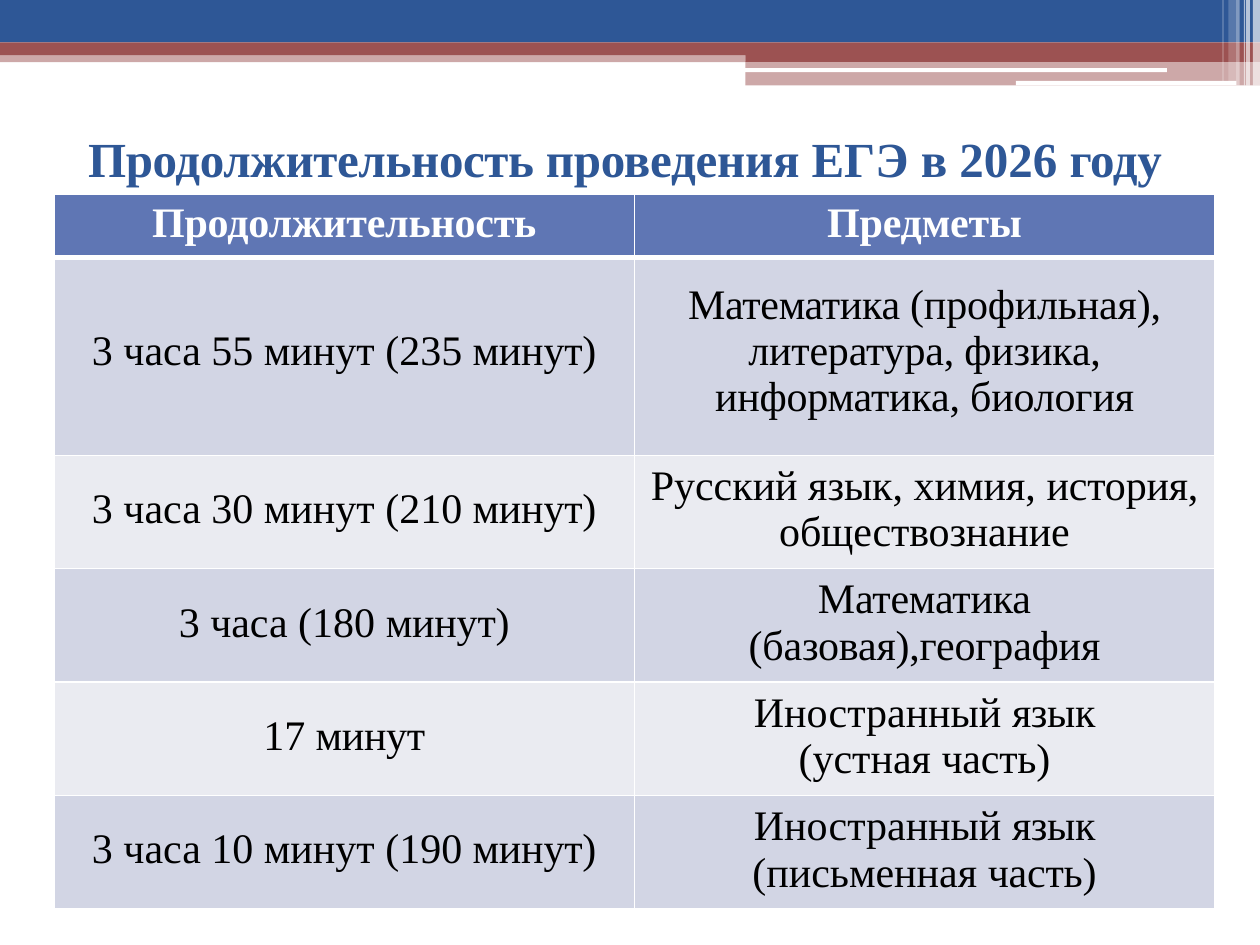
from pptx import Presentation, util as u
from pptx.dml.color import RGBColor
from pptx.enum import shapes, text
from pptx.oxml.xmlchemy import OxmlElement

Pt = u.Pt
BLUE, RED, WHITE = "2E5796", "9C5252", "FFFFFF"
HEADER, DARK, LIGHT = "5F76B4", "D2D5E4", "EAEBF1"


def rgb(value):
    return RGBColor.from_string(value)


class Deck:
    font = "Times New Roman"

    def __init__(self, slide):
        self.s = slide

    def paint(self, sp, color, alpha=100):
        sp.shadow.inherit = False
        sp.line.fill.background()
        sp.fill.solid()
        sp.fill.fore_color.rgb = rgb(color)
        if alpha < 100:
            a = OxmlElement("a:alpha")
            a.set("val", str(alpha * 1000))
            sp.fill._xPr.solidFill[0].append(a)

    def bar(self, x, y, w, h, color, alpha=100):
        sp = self.s.shapes.add_shape(shapes.MSO_SHAPE.RECTANGLE, Pt(x), Pt(y), Pt(w), Pt(h))
        self.paint(sp, color, alpha)

    def outline(self, points, color):
        start, *rest = [(Pt(x), Pt(y)) for x, y in points]
        builder = self.s.shapes.build_freeform(*start)
        builder.add_line_segments(rest)
        self.paint(builder.convert_to_shape(), color)

    def runs(self, p, parts, size, color, bold=False):
        """Each part is a text with its letter spacing in 1/100 pt."""
        for words, spacing in parts:
            r = p.add_run()
            r.text = words
            r.font.name, r.font.size, r.font.bold = self.font, Pt(size), bold
            r.font.color.rgb = rgb(color)
            r._r.get_or_add_rPr().set("spc", str(spacing))

    def title(self, x, y, w, h, parts):
        tf = self.s.shapes.add_textbox(Pt(x), Pt(y), Pt(w), Pt(h)).text_frame
        tf.word_wrap = True
        tf.margin_left = tf.margin_right = tf.margin_bottom = 0
        tf.margin_top = Pt(0.9)
        p = tf.paragraphs[0]
        p.alignment = text.PP_ALIGN.LEFT
        p.line_spacing = 1.0
        self.runs(p, parts, 28, BLUE, True)

    def borders(self, cell, top, bottom):
        for side, width in (("L", 1), ("R", 1), ("T", top), ("B", bottom)):
            ln = OxmlElement(f"a:ln{side}")
            ln.set("w", str(Pt(width)))
            fill, clr = OxmlElement("a:solidFill"), OxmlElement("a:srgbClr")
            clr.set("val", WHITE)
            fill.append(clr)
            ln.append(fill)
            cell._tc.get_or_add_tcPr().append(ln)

    def cell(self, cell, paragraphs, row, side):
        self.borders(cell, 3 if row == 1 else 1, 3 if row == 0 else 1)
        cell.fill.solid()
        cell.fill.fore_color.rgb = rgb(HEADER if row == 0 else DARK if row % 2 else LIGHT)
        cell.vertical_anchor = text.MSO_ANCHOR.MIDDLE
        cell.margin_left = cell.margin_right = Pt(side)
        cell.margin_top, cell.margin_bottom = 0, Pt(6 if row == 1 else 3)
        tf = cell.text_frame
        for i, parts in enumerate(paragraphs):
            p = tf.paragraphs[0] if i == 0 else tf.add_paragraph()
            p.alignment = text.PP_ALIGN.CENTER
            self.runs(p, parts, 24, WHITE if row == 0 else "000000", row == 0)

    def table(self, x, y, widths, heights, rows):
        """Each row holds the left cell, the right cell and the right cell's side margin."""
        table = self.s.shapes.add_table(len(rows), len(widths), Pt(x), Pt(y),
                                        Pt(sum(widths)), Pt(sum(heights))).table
        for col, width in zip(table.columns, widths):
            col.width = Pt(width)
        for i, (left, right, side) in enumerate(rows):
            table.rows[i].height = Pt(heights[i])
            self.cell(table.cell(i, 0), [left], i, 0)
            self.cell(table.cell(i, 1), right, i, side)


def language(part):
    return [("Иностранный ", 0), ("язык ", -20), (f"({part} ", 0), ("часть)", -10)]


def main():
    prs = Presentation()
    prs.slide_width, prs.slide_height = Pt(720), Pt(540)
    d = Deck(prs.slides.add_slide(prs.slide_layouts[6]))

    # Header bands
    d.bar(0, 31.5, 426, 4, RED, 50)
    d.bar(0, 0, 720, 24.3, BLUE)
    d.outline([(720, 24.3), (0, 24.3), (0, 31.5), (426, 31.5), (426, 35.4),
               (720, 35.4), (720, 24.3)], RED)
    d.bar(426, 35, 294, 13.8, RED, 50)
    d.bar(425.8, 39, 241, 2.2, WHITE)
    d.bar(580.5, 46.3, 126, 2.6, WHITE)

    # Translucent stripes in the corner
    for x, w, h, alpha in ((712.1, 2.2, 49, 65), (715.9, 4.1, 49, 65), (710.8, 0.7, 49, 60),
                           (706.3, 2, 49, 40), (702, 4.3, 46.3, 20), (698.5, 0.7, 46.3, 30)):
        d.bar(x, 0, w, h, WHITE, alpha)

    # Title
    d.title(50.4, 72.7, 621.4, 35.3, [("Продолжительность ", -20), ("проведения ", -10),
                                      ("ЕГЭ в 2026 ", 0), ("году", -20)])

    # Exam durations
    minutes = (" минут)", -10)
    d.table(30.9, 111.2, [331.6] * 2, [36, 113] + [64.8] * 4, [
        ([("Продолжительность", -10)], [[("Предметы", -10)]], 0),
        ([("3 часа 55 минут (235", 0), minutes],
         [[("Математика ", -20),
           ("(профильная), литература, физика, информатика, биология", -10)]], 28),
        ([("3 часа 30 минут (210", 0), minutes],
         [[("Русский язык, химия, ", 0), ("история, обществознание", -10)]], 0),
        ([("3 часа (180 ", 0), ("минут)", -10)],
         [[("Математика", -10)], [("(базовая),география", -10)]], 0),
        ([("17 ", 0), ("минут", -20)], [language("устная")], 60),
        ([("3 часа 10 минут (190", 0), minutes], [language("письменная")], 60),
    ])
    prs.save("out.pptx")


if __name__ == "__main__":
    main()
